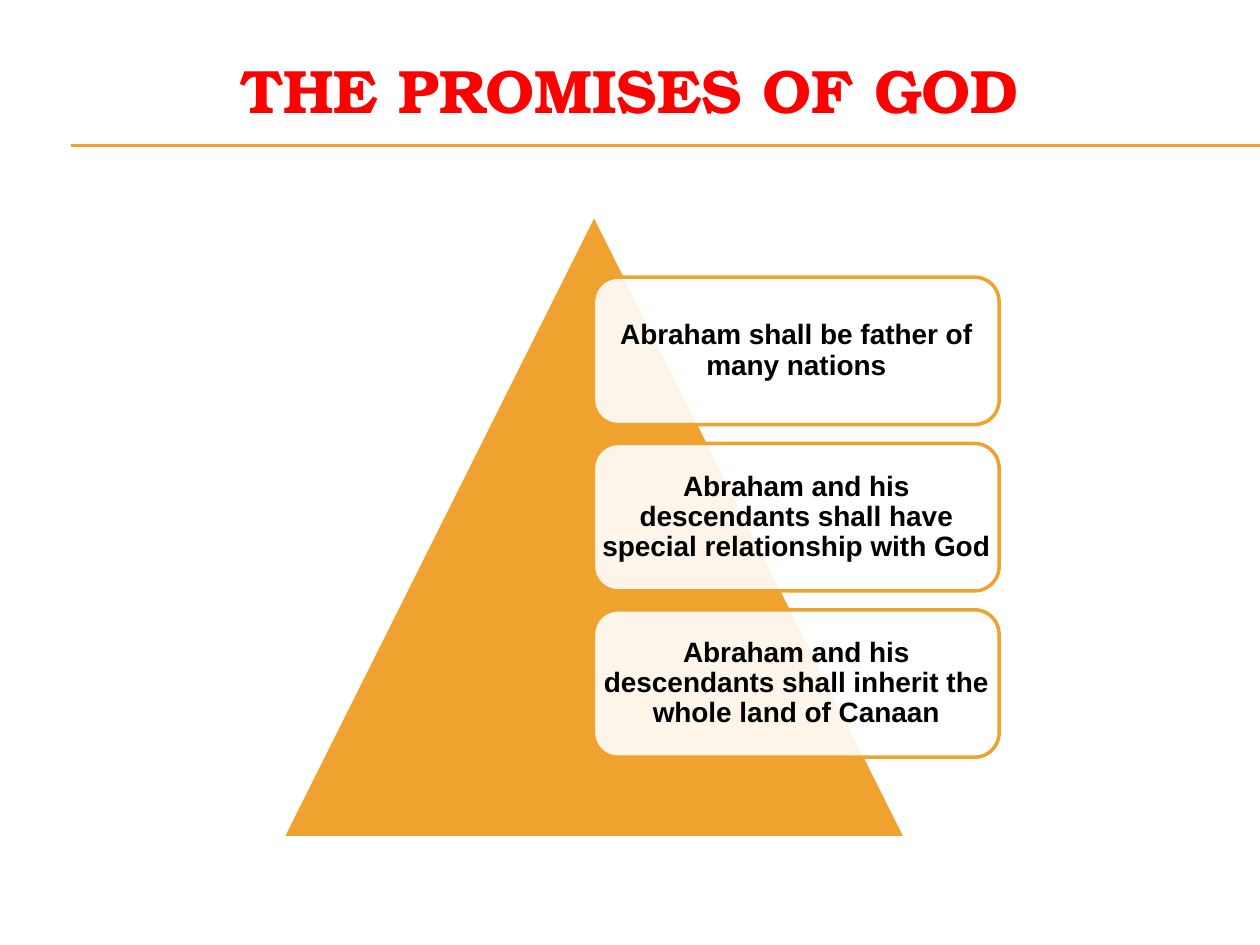
from pptx import Presentation
from pptx.dml.color import RGBColor
from pptx.enum.shapes import MSO_CONNECTOR, MSO_SHAPE
from pptx.enum.text import MSO_ANCHOR, PP_ALIGN
from pptx.oxml.ns import qn
from pptx.util import Inches, Pt
from lxml.etree import SubElement

COLORS = {"gold": "F0A22E", "white": "FFFFFF", "title": "FF0000", "text": "000000"}
PROMISES = [
    "Abraham shall be father of many nations",
    "Abraham and his descendants shall have special relationship with God",
    "Abraham and his descendants shall inherit the whole land of Canaan",
]
TITLE_FORMAT = {"name": "TeX Gyre Bonum", "size": Pt(35), "bold": True}
PROMISE_FORMAT = {"name": "Arial", "size": Pt(16), "bold": True}


def rgb(name):
    return RGBColor.from_string(COLORS[name])


def write(shape, text, font_format, color, inset):
    frame = shape.text_frame
    frame.word_wrap = True
    frame.vertical_anchor = MSO_ANCHOR.MIDDLE
    for side in ("left", "top", "right", "bottom"):
        setattr(frame, f"margin_{side}", Inches(inset))
    paragraph = frame.paragraphs[0]
    paragraph.alignment = PP_ALIGN.CENTER
    run = paragraph.add_run()
    run.text = text
    for attribute, value in font_format.items():
        setattr(run.font, attribute, value)
    run.font.color.rgb = rgb(color)
    return paragraph


prs = Presentation()
prs.slide_width, prs.slide_height = Inches(10), Inches(7.5)
slide = prs.slides.add_slide(prs.slide_layouts[6])
shapes = slide.shapes

# Double rule under the title
for rule_y in (1.15, 1.16):
    rule = shapes.add_connector(
        MSO_CONNECTOR.STRAIGHT, Inches(0.56), Inches(rule_y), Inches(10), Inches(rule_y))
    rule.line.color.rgb = rgb("gold")
    rule.line.width = Pt(0.75)
    SubElement(rule.element.spPr, qn("a:effectLst"))

# Title
title = shapes.add_textbox(Inches(0), Inches(0.25), Inches(10), Inches(0.92))
write(title, "THE PROMISES OF GOD", TITLE_FORMAT, "title", 0.05)

# Pyramid
pyramid = shapes.add_shape(
    MSO_SHAPE.ISOSCELES_TRIANGLE, Inches(2.24), Inches(1.7), Inches(4.95), Inches(4.95))
pyramid.shadow.inherit = False
pyramid.fill.solid()
pyramid.fill.fore_color.rgb = rgb("gold")
pyramid.line.color.rgb = rgb("white")
pyramid.line.width = Pt(2)

# Promise cards, 90 % opaque over the pyramid
for row, promise in enumerate(PROMISES):
    card = shapes.add_shape(
        MSO_SHAPE.ROUNDED_RECTANGLE,
        Inches(4.71), Inches(2.2 + row * 1.32), Inches(3.22), Inches(1.17))
    card.shadow.inherit = False
    card.fill.solid()
    card.fill.fore_color.rgb = rgb("white")
    fill_color = card.element.spPr.find(qn("a:solidFill")).find(qn("a:srgbClr"))
    SubElement(fill_color, qn("a:alpha"), val="90000")
    card.line.color.rgb = rgb("gold")
    card.line.width = Pt(2)
    # The rounded corners already push the text in, so the inset is small
    write(card, promise, PROMISE_FORMAT, "text", 0.01).line_spacing = 0.9

prs.save("out.pptx")
